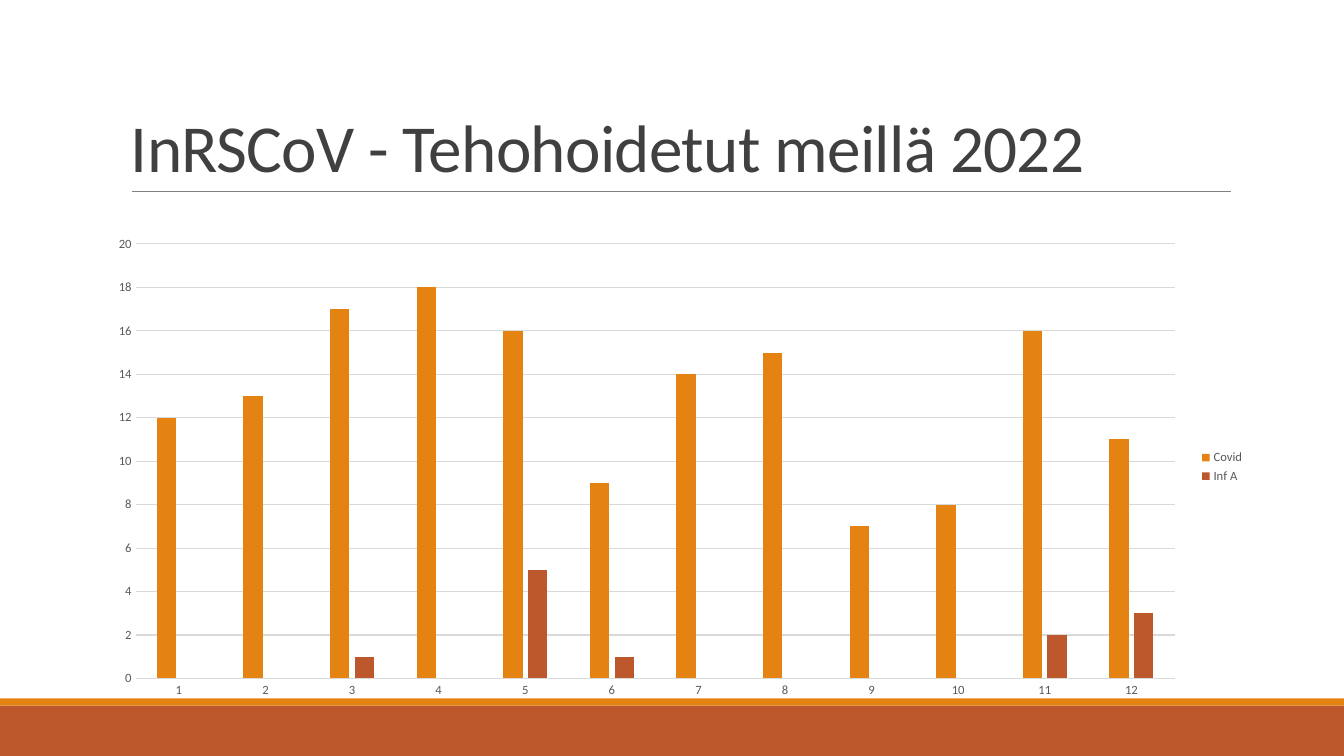
from dataclasses import dataclass

from lxml import etree
from pptx import Presentation
from pptx import util as u
from pptx.chart import data as chart_data
from pptx.dml.color import RGBColor
from pptx.enum import chart as chart_enum, shapes, text
from pptx.oxml import ns, parse_xml
from pptx.util import Cm


@dataclass(frozen=True)
class Theme:
    font: str = "Calibri"
    orange: RGBColor = RGBColor(0xE4, 0x83, 0x12)
    rust: RGBColor = RGBColor(0xBD, 0x58, 0x2C)
    title: RGBColor = RGBColor(0x40, 0x40, 0x40)
    rule: RGBColor = RGBColor(0x80, 0x80, 0x80)
    label: RGBColor = RGBColor(0x59, 0x59, 0x59)
    grid: RGBColor = RGBColor(0xD9, 0xD9, 0xD9)
    title_size: u.Pt = u.Pt(48)
    chart_size: u.Pt = u.Pt(10)
    label_size: u.Pt = u.Pt(9)


THEME = Theme()
SLIDE_WIDTH, SLIDE_HEIGHT = Cm(33.87), Cm(19.05)

COVID = (12, 13, 17, 18, 16, 9, 14, 15, 7, 8, 16, 11)
INFLUENZA_A = (None, None, 1, None, 5, 1, None, None, None, None, 2, 3)


def style_font(font, size, color):
    font.name = THEME.font
    font.size = size
    font.color.rgb = color


def style_line(line, color, width):
    line.color.rgb = color
    line.width = width


def add_band(slide, top, height, color):
    shape = slide.shapes.add_shape(
        shapes.MSO_SHAPE.RECTANGLE, 0, top, SLIDE_WIDTH, height)
    shape.shadow.inherit = False
    shape.fill.solid()
    shape.fill.fore_color.rgb = color
    shape.line.fill.background()


def add_rule(slide, left, right, top):
    connector = slide.shapes.add_connector(
        shapes.MSO_CONNECTOR.STRAIGHT, left, top, right, top)
    style_line(connector.line, THEME.rule, u.Pt(0.5))
    properties = connector._element.spPr
    etree.SubElement(properties, ns.qn("a:effectLst"))


def add_title(slide, wording):
    box = slide.shapes.add_textbox(Cm(3.05), Cm(0.79), Cm(27.94), Cm(4.04))
    frame = box.text_frame
    frame.word_wrap = True
    frame.vertical_anchor = text.MSO_ANCHOR.BOTTOM
    paragraph = frame.paragraphs[0]
    paragraph.line_spacing = 0.85
    run = paragraph.add_run()
    run.text = wording
    style_font(run.font, THEME.title_size, THEME.title)
    # Letter spacing in hundredths of a point
    run.font._element.set("spc", "-50")


def style_axes(chart):
    for axis in (chart.category_axis, chart.value_axis):
        axis.major_tick_mark = chart_enum.XL_TICK_MARK.NONE
        axis.minor_tick_mark = chart_enum.XL_TICK_MARK.NONE
        style_font(axis.tick_labels.font, THEME.label_size, THEME.label)
    style_line(chart.category_axis.format.line, THEME.grid, u.Pt(0.75))

    value_axis = chart.value_axis
    value_axis.minimum_scale, value_axis.maximum_scale = 0, 20
    value_axis.major_unit = 2
    value_axis.format.line.fill.background()
    style_line(value_axis.major_gridlines.format.line, THEME.grid, u.Pt(0.75))


def clear_chart_background(chart):
    background = parse_xml(
        f'<c:spPr {ns.nsdecls("c", "a")}><a:noFill/>'
        '<a:ln><a:noFill/></a:ln></c:spPr>')
    chart._chartSpace.find(ns.qn("c:chart")).addnext(background)


def add_monthly_chart(slide, series_table):
    figures = chart_data.CategoryChartData()
    figures.categories = [str(month) for month in range(1, 13)]
    for name, values, _ in series_table:
        figures.add_series(name, values)
    chart = slide.shapes.add_chart(
        chart_enum.XL_CHART_TYPE.COLUMN_CLUSTERED,
        Cm(2.41), Cm(5.72), Cm(29.21), Cm(12.09), figures).chart
    style_font(chart.font, THEME.chart_size, RGBColor(0, 0, 0))
    chart.has_title = False
    clear_chart_background(chart)
    style_axes(chart)

    # Columns
    plot = chart.plots[0]
    plot.gap_width, plot.overlap = 219, -27
    plot.vary_by_categories = False
    for series, (_, _, color) in zip(plot.series, series_table):
        series.format.fill.solid()
        series.format.fill.fore_color.rgb = color
        series.invert_if_negative = False

    # Legend
    chart.has_legend = True
    chart.legend.position = chart_enum.XL_LEGEND_POSITION.RIGHT
    chart.legend.include_in_layout = False
    style_font(chart.legend.font, THEME.label_size, THEME.label)


def main():
    presentation = Presentation()
    presentation.slide_width = SLIDE_WIDTH
    presentation.slide_height = SLIDE_HEIGHT
    slide = presentation.slides.add_slide(presentation.slide_layouts[6])

    # Footer bands
    add_band(slide, Cm(17.78), Cm(1.27), THEME.rust)
    add_band(slide, Cm(17.6), Cm(0.18), THEME.orange)

    # Heading
    add_rule(slide, Cm(3.33), Cm(31.01), Cm(4.83))
    add_title(slide, "InRSCoV - Tehohoidetut meillä 2022")

    # Patients per month
    add_monthly_chart(slide, (
        ("Covid", COVID, THEME.orange),
        ("Inf A ", INFLUENZA_A, THEME.rust),
    ))

    presentation.save("out.pptx")


if __name__ == "__main__":
    main()
